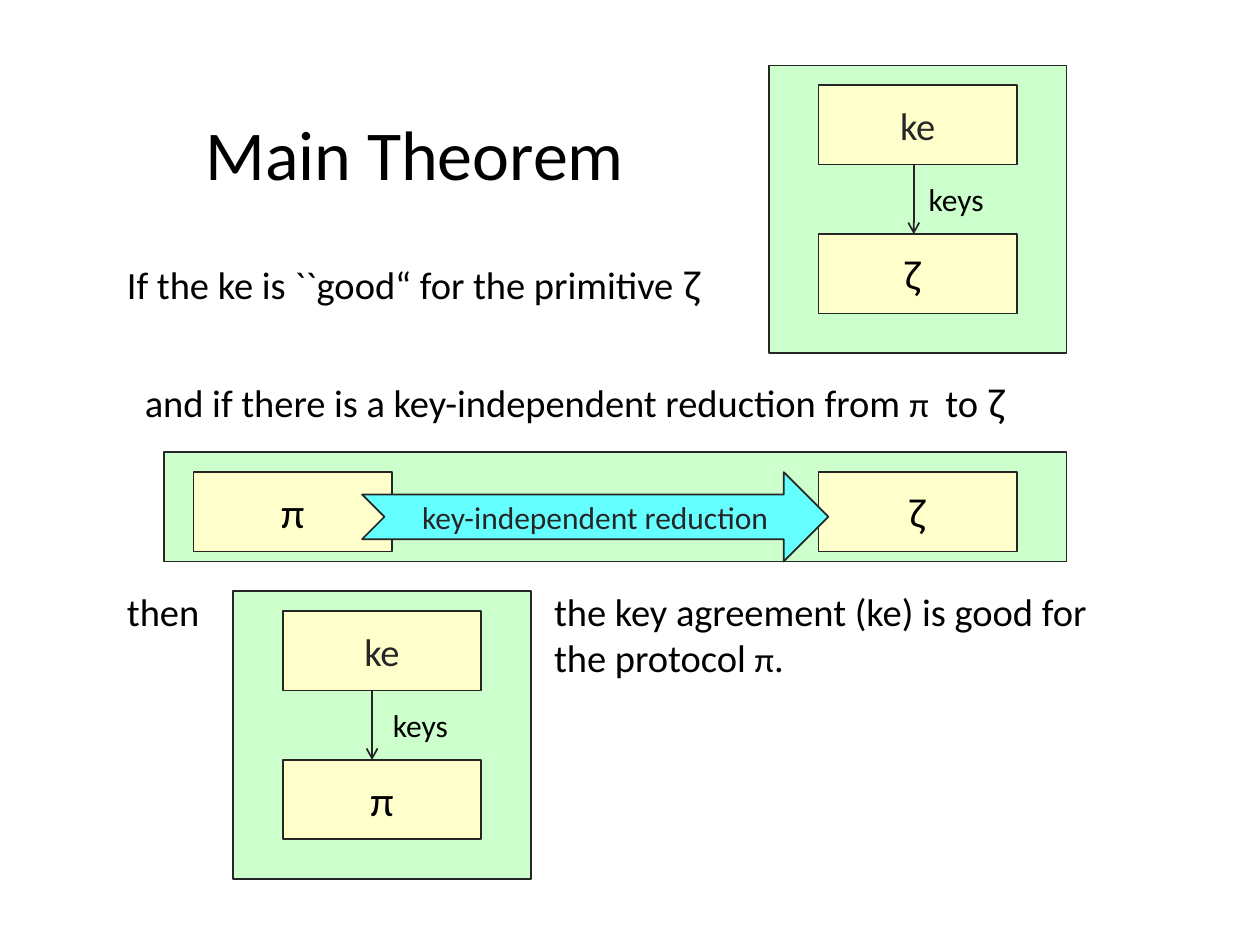
from dataclasses import dataclass
from typing import NamedTuple, Optional

from lxml.etree import SubElement
from pptx import Presentation
from pptx.dml.color import RGBColor
from pptx.enum.shapes import MSO_CONNECTOR, MSO_SHAPE
from pptx.enum.text import MSO_ANCHOR, MSO_AUTO_SIZE, PP_ALIGN
from pptx.oxml.ns import qn
from pptx.util import Cm, Pt


@dataclass(frozen=True)
class Theme:
    font: str = "Calibri"
    symbol_font: str = "Roboto"
    black: str = "000000"
    ink: str = "262626"
    panel: str = "CCFFCC"
    box: str = "FFFFCC"
    arrow: str = "66FFFF"
    title: float = 40
    large: float = 24
    body: float = 22
    inline_symbol: float = 20
    label: float = 18
    line: float = 1


THEME = Theme()


class Span(NamedTuple):
    text: str
    size: float = THEME.body
    font: str = THEME.font
    color: str = THEME.black


class Area(NamedTuple):
    """Left, top, width and height in centimetres."""
    left: float
    top: float
    width: float
    height: float

    def lengths(self) -> list:
        return [Cm(value) for value in self]


class KeyPanel(NamedTuple):
    """A key exchange (ke) handing its keys to a user below it."""
    left: float
    top: float
    user: Span
    arrow_offset: float


class Statement(NamedTuple):
    area: Area
    lines: list
    wrap: bool = False


PANEL_WIDTH, PANEL_HEIGHT = 6, 5.8
BOX_WIDTH, BOX_HEIGHT = 4, 1.6
MARGIN_X, MARGIN_Y = 1, 0.4
BOX_STEP = 3.4

KE = Span("ke", color=THEME.ink)
PI = Span("π", THEME.large)
ZETA = Span("ζ", font=THEME.symbol_font)
INLINE_PI = Span("π", THEME.inline_symbol)

PANELS = [
    KeyPanel(15.5, 1.32, ZETA._replace(text="ζ "), 2.92),
    KeyPanel(4.7, 11.92, PI, 2.8),
]

STATEMENTS = [
    Statement(Area(2.31, 5.13, 12.45, 1.19),
              [[Span("If the ke is ``good“ for the primitive "), ZETA]]),
    Statement(Area(2.67, 7.52, 18.72, 1.19),
              [[Span("and if there is a key-independent reduction from "),
                INLINE_PI._replace(text="π "), Span(" to "), ZETA]],
              wrap=True),
    Statement(Area(2.31, 11.73, 1.98, 1.19), [[Span("then")]]),
    Statement(Area(10.92, 11.73, 11.38, 2.13),
              [[Span("the key agreement (ke) is good for")],
               [Span("the protocol "), INLINE_PI, Span(".")]]),
]


def write_lines(frame, lines: list, align: PP_ALIGN) -> None:
    for index, spans in enumerate(lines):
        para = frame.add_paragraph() if index else frame.paragraphs[0]
        para.alignment = align
        for span in spans:
            run = para.add_run()
            run.text = span.text
            run.font.size = Pt(span.size)
            run.font.name = span.font
            run.font.color.rgb = RGBColor.from_string(span.color)


def add_text(shapes, area: Area, lines: list, *, wrap: bool = False,
             align: PP_ALIGN = PP_ALIGN.LEFT,
             anchor: MSO_ANCHOR = MSO_ANCHOR.TOP) -> None:
    frame = shapes.add_textbox(*area.lengths()).text_frame
    frame.word_wrap = wrap
    frame.auto_size = MSO_AUTO_SIZE.SHAPE_TO_FIT_TEXT
    frame.vertical_anchor = anchor
    write_lines(frame, lines, align)


def add_block(shapes, area: Area, fill: str, label: Optional[Span] = None,
              kind: MSO_SHAPE = MSO_SHAPE.RECTANGLE) -> None:
    block = shapes.add_shape(kind, *area.lengths())
    block.shadow.inherit = False
    block.fill.solid()
    block.fill.fore_color.rgb = RGBColor.from_string(fill)
    block.line.color.rgb = RGBColor.from_string(THEME.ink)
    block.line.width = Pt(THEME.line)
    if label:
        block.text_frame.vertical_anchor = MSO_ANCHOR.MIDDLE
        write_lines(block.text_frame, [[label]], PP_ALIGN.CENTER)


def add_box(shapes, left: float, top: float, label: Span) -> None:
    add_block(shapes, Area(left, top, BOX_WIDTH, BOX_HEIGHT), THEME.box, label)


def add_down_arrow(shapes, x: float, top: float, bottom: float) -> None:
    arrow = shapes.add_connector(MSO_CONNECTOR.STRAIGHT,
                                 Cm(x), Cm(top), Cm(x), Cm(bottom))
    arrow.line.color.rgb = RGBColor.from_string(THEME.ink)
    arrow.line.width = Pt(THEME.line)
    SubElement(arrow.line._get_or_add_ln(), qn("a:tailEnd"), type="arrow")
    SubElement(arrow._element.spPr, qn("a:effectLst"))


def add_key_panel(slide, panel: KeyPanel) -> None:
    shapes = slide.shapes.add_group_shape().shapes
    left, top = panel.left + MARGIN_X, panel.top + MARGIN_Y
    add_block(shapes, Area(panel.left, panel.top, PANEL_WIDTH, PANEL_HEIGHT),
              THEME.panel)
    add_box(shapes, left, top, KE)
    add_box(shapes, left, top + BOX_STEP - MARGIN_Y, panel.user)
    add_down_arrow(shapes, panel.left + panel.arrow_offset,
                   top + BOX_HEIGHT, top + BOX_STEP - MARGIN_Y)
    add_text(shapes, Area(panel.left + 2.97, panel.top + 2.18, 1.63, 1.02),
             [[Span("keys", THEME.label)]])


def add_reduction(slide) -> None:
    """Band showing the reduction from the protocol to the primitive."""
    shapes = slide.shapes.add_group_shape().shapes
    band = Area(3.3, 9.12, 18.2, 2.2)
    top = band.top + MARGIN_Y
    add_block(shapes, band, THEME.panel)
    add_box(shapes, 16.5, top, ZETA)
    add_box(shapes, 3.9, top, PI)
    add_block(shapes, Area(7.3, top, 9.4, 1.8), THEME.arrow,
              Span("key-independent reduction", THEME.label, color=THEME.ink),
              MSO_SHAPE.NOTCHED_RIGHT_ARROW)


def main() -> None:
    deck = Presentation()
    deck.slide_width, deck.slide_height = Cm(25.4), Cm(19.05)
    slide = deck.slides.add_slide(deck.slide_layouts[6])
    add_text(slide.shapes, Area(3.84, 2.08, 9.04, 1.98),
             [[Span("Main Theorem", THEME.title)]],
             align=PP_ALIGN.CENTER, anchor=MSO_ANCHOR.MIDDLE)
    for panel in PANELS:
        add_key_panel(slide, panel)
    add_reduction(slide)
    for statement in STATEMENTS:
        add_text(slide.shapes, statement.area, statement.lines,
                 wrap=statement.wrap)
    deck.save("out.pptx")


if __name__ == "__main__":
    main()
